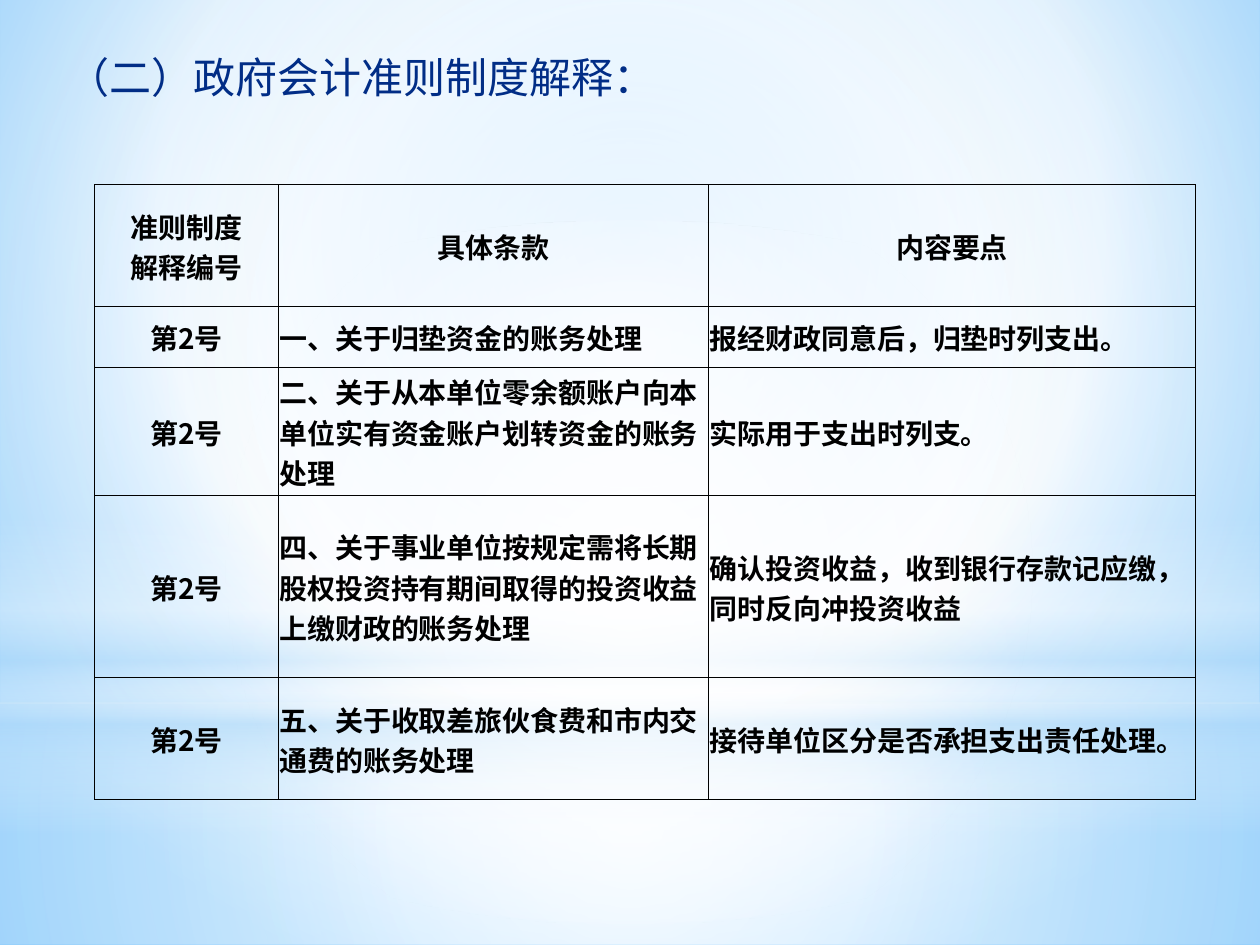
from dataclasses import dataclass

from lxml.etree import SubElement
from pptx import Presentation
from pptx.dml.color import RGBColor
from pptx.enum.lang import MSO_LANGUAGE_ID
from pptx.enum.shapes import MSO_SHAPE
from pptx.enum.text import MSO_ANCHOR, PP_ALIGN
from pptx.oxml.ns import qn
from pptx.util import Inches, Pt

HEADING = "（二）政府会计准则制度解释："
HEADER = ("准则制度\n解释编号", "具体条款", "内容要点")
ISSUE = "第2号"
CLAUSES = [
    ("一、关于归垫资金的账务处理", "报经财政同意后，归垫时列支出。"),
    ("二、关于从本单位零余额账户向本单位实有资金账户划转资金的账务处理",
     "实际用于支出时列支。"),
    ("四、关于事业单位按规定需将长期股权投资持有期间取得的投资收益上缴财政的账务处理",
     "确认投资收益，收到银行存款记应缴，同时反向冲投资收益"),
    ("五、关于收取差旅伙食费和市内交通费的账务处理", "接待单位区分是否承担支出责任处理。"),
]
ROWS = [HEADER] + [(ISSUE, clause, point) for clause, point in CLAUSES]
COLUMN_SHARES = (1.46, 3.42, 3.87)
ROW_SHARES = (2, 1, 2.1, 3, 2)


@dataclass(frozen=True)
class Theme:
    font: str = "Noto Sans CJK SC"
    heading_size: int = 24
    cell_size: int = 16
    border_width: float = 0.5
    ink: str = "000000"
    white: str = "FFFFFF"
    haze: str = "B4DCFA"
    sky: str = "9ED5FF"
    deep_sky: str = "5BB9FF"
    navy: str = "012D86"
    dark_navy: str = "0E2557"


THEME = Theme()
WHITE, HAZE = THEME.white, THEME.haze
CENTRE = (50, 50, 50, 50)
BACKDROP = [(0, THEME.sky, 100), (60, WHITE, 100), (100, THEME.deep_sky, 100)]
HEADING_INK = [(0, THEME.navy, 100), (100, THEME.dark_navy, 100)]
GLOWS = [
    (MSO_SHAPE.RECTANGLE, (0, 74.4, 100, 25.6), CENTRE,
     [(0, WHITE, 91), (37, WHITE, 76), (100, HAZE, 79)]),
    (MSO_SHAPE.RECTANGLE, (0, 0, 100, 74.4), CENTRE,
     [(0, WHITE, 89), (48, WHITE, 62), (100, HAZE, 79)]),
    (MSO_SHAPE.RECTANGLE, (0, 54.93, 100, 33.33), None,
     [(0, WHITE, 0), (29, WHITE, 30), (45, HAZE, 40), (55, WHITE, 26),
      (65, HAZE, 60), (100, WHITE, 0)]),
    (MSO_SHAPE.OVAL, (0, 23.33, 100, 74.4), CENTRE,
     [(0, WHITE, 100), (56, WHITE, 0)]),
]
HEADING_AREA = (4.4, 4.8, 49, 6.67)
TABLE_AREA = (7.5, 19.55, 87.4, 65.07)

deck = Presentation()
deck.slide_width, deck.slide_height = Inches(10), Inches(7.5)
slide = deck.slides.add_slide(deck.slide_layouts[6])


def place(area):
    sides = (deck.slide_width, deck.slide_height) * 2
    return [int(side * percent / 100) for side, percent in zip(sides, area)]


def split(total, shares):
    return [int(total * share / sum(shares)) for share in shares]


def add_colour(parent, colour, opacity=100):
    tint = SubElement(parent, qn("a:srgbClr"), val=colour)
    if opacity < 100:
        SubElement(tint, qn("a:alpha"), val=str(opacity * 1000))


def paint_gradient(fill, owner, stops, focus=None):
    fill.gradient()
    gradient = next(owner.iter(qn("a:gradFill")))
    for part in list(gradient):
        gradient.remove(part)
    stop_list = SubElement(gradient, qn("a:gsLst"))
    for position, colour, opacity in stops:
        stop = SubElement(stop_list, qn("a:gs"), pos=str(position * 1000))
        add_colour(stop, colour, opacity)
    if focus:
        circle = SubElement(gradient, qn("a:path"), {"path": "circle"})
        edges = {edge: str(inset * 1000) for edge, inset in zip("ltrb", focus)}
        SubElement(circle, qn("a:fillToRect"), edges)
    else:
        SubElement(gradient, qn("a:lin"), ang="5400000", scaled="0")


def add_run(paragraph, wording, size):
    run = paragraph.add_run()
    run.text = wording
    run.font.size = Pt(size)
    run.font.name = THEME.font
    run.font.language_id = MSO_LANGUAGE_ID.SIMPLIFIED_CHINESE
    SubElement(run.font.fill and run._r.get_or_add_rPr(), qn("a:ea"),
               typeface=THEME.font)
    return run


def add_borders(cell):
    properties = cell._tc.get_or_add_tcPr()
    for index, side in enumerate(("a:lnL", "a:lnR", "a:lnT", "a:lnB")):
        line = SubElement(properties, qn(side), w=str(Pt(THEME.border_width)))
        add_colour(SubElement(line, qn("a:solidFill")), THEME.ink)
        properties.insert(index, line)


def fill_cell(cell, wording, centred):
    cell.fill.background()
    add_borders(cell)
    cell.vertical_anchor = MSO_ANCHOR.MIDDLE
    cell.margin_left = cell.margin_right = cell.margin_top = Inches(0.01)
    cell.margin_bottom = 0
    paragraph = cell.text_frame.paragraphs[0]
    paragraph.alignment = PP_ALIGN.CENTER if centred else PP_ALIGN.LEFT
    for index, line in enumerate(wording.split("\n")):
        if index:
            paragraph.add_line_break()
        run = add_run(paragraph, line, THEME.cell_size)
        run.font.bold = True
        run.font.color.rgb = RGBColor.from_string(THEME.ink)


paint_gradient(slide.background.fill, slide.element, BACKDROP, (20, 10, 20, 60))
for outline, area, focus, stops in GLOWS:
    glow = slide.shapes.add_shape(outline, *place(area))
    glow.shadow.inherit = False
    glow.line.fill.background()
    paint_gradient(glow.fill, glow.element, stops, focus)

heading = slide.shapes.add_textbox(*place(HEADING_AREA))
heading.text_frame.word_wrap = True
heading_run = add_run(heading.text_frame.paragraphs[0], HEADING, THEME.heading_size)
paint_gradient(heading_run.font.fill, heading.element, HEADING_INK)

left, top, width, height = place(TABLE_AREA)
clauses = slide.shapes.add_table(
    len(ROWS), len(HEADER), left, top, width, height).table
clauses.first_row = clauses.horz_banding = False
for column, share in zip(clauses.columns, split(width, COLUMN_SHARES)):
    column.width = share
for row, share in zip(clauses.rows, split(height, ROW_SHARES)):
    row.height = share
for row_index, wordings in enumerate(ROWS):
    for column_index, wording in enumerate(wordings):
        centred = row_index == 0 or column_index == 0
        fill_cell(clauses.cell(row_index, column_index), wording, centred)

deck.save("out.pptx")
